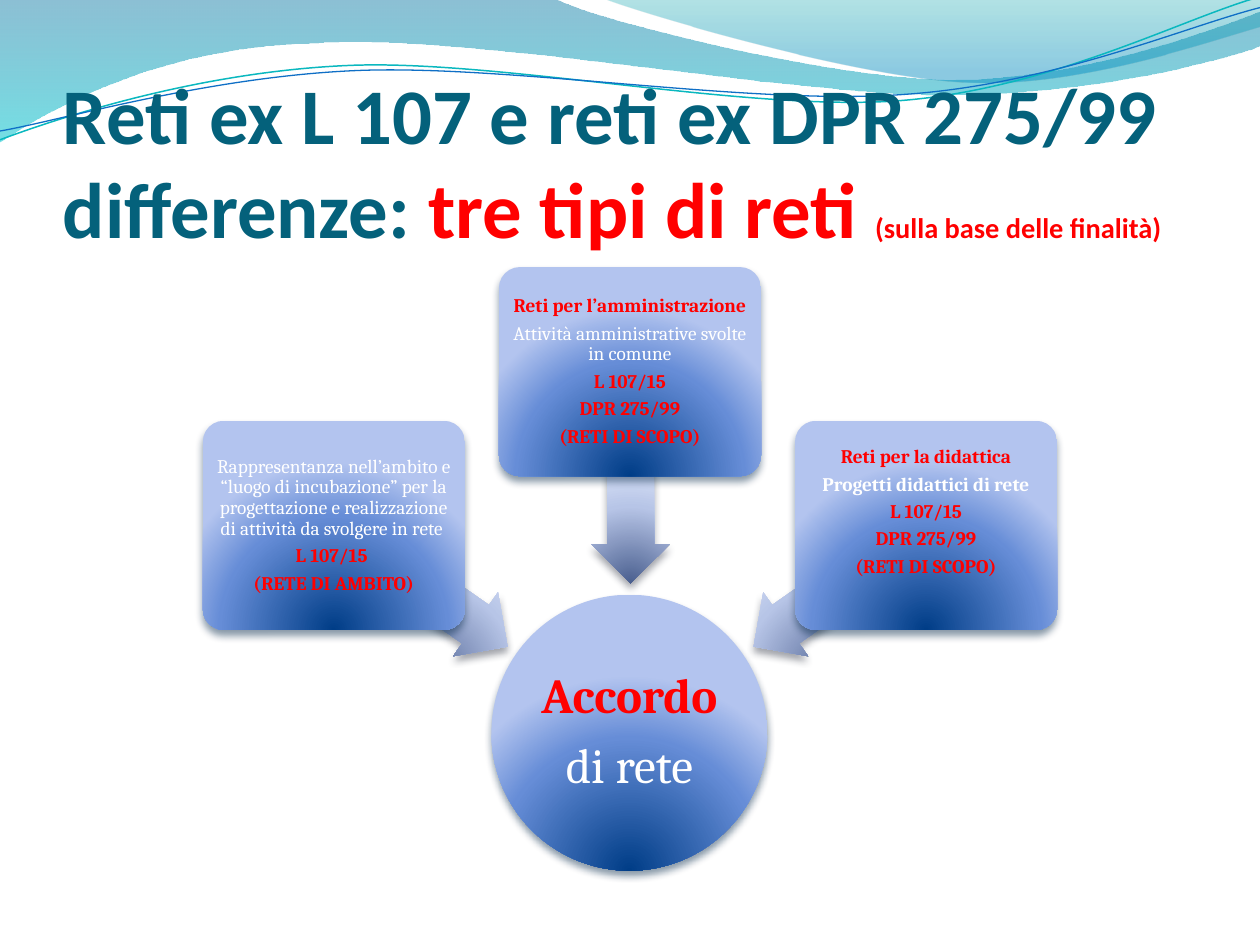
from dataclasses import dataclass
from math import cos, radians, sin

from pptx import Presentation
from pptx import util as u
from pptx.dml.color import RGBColor
from pptx.enum import shapes, text
from pptx.oxml import parse_xml
from pptx.oxml.ns import qn

NS = 'xmlns:a="http://schemas.openxmlformats.org/drawingml/2006/main"'


@dataclass(frozen=True)
class Theme:
    # Gradient stops are (position %, colour, opacity %)
    wave: tuple = ((0, "0074A1", 45), (100, "00C6CF", 55))
    crest: tuple = ((0, "00A1A9", 30), (80, "008BBF", 45))
    node: tuple = ((0, "003D87", 100), (68, "668DD7", 100), (100, "B3C4EF", 100))
    arrow: tuple = ((0, "4A5F8F", 100), (68, "B7C5E7", 100), (100, "D5DEF5", 100))
    node_shadow: str = "042747"
    arrow_shadow: str = "3C414F"
    teal_line: str = "0AB8BF"
    blue_line: str = "0F6FC6"
    title: str = "04617B"
    red: str = "FF0000"
    white: str = "FFFFFF"
    title_font: str = "Calibri"
    body_font: str = "Cambria"
    title_size: float = 45
    note_size: float = 16.2
    hub_size: float = 28
    card_size: float = 11


T = Theme()
LINEAR = '<a:lin ang="5400000" scaled="1"/>'
RADIAL = ('<a:path path="circle"><a:fillToRect l="50000" t="130000" '
          'r="50000" b="-30000"/></a:path>')


def apply(obj, **values):
    for name, value in values.items():
        setattr(obj, name, value)


def fill_gradient(sp, stops, direction):
    sp.fill.gradient()
    old = sp._element.spPr.find(qn("a:gradFill"))
    gs = "".join(
        f'<a:gs pos="{pos * 1000}"><a:srgbClr val="{color}">'
        f'<a:alpha val="{alpha * 1000}"/></a:srgbClr></a:gs>'
        for pos, color, alpha in stops)
    new = parse_xml(f'<a:gradFill {NS} rotWithShape="1"><a:gsLst>{gs}</a:gsLst>'
                    f'{direction}</a:gradFill>')
    old.getparent().replace(old, new)


def add_shadow(sp, color):
    sp.shadow.inherit = False
    sp._element.spPr.find(qn("a:effectLst")).append(parse_xml(
        f'<a:outerShdw {NS} blurRad="57150" dist="38100" dir="5400000" '
        f'algn="ctr" rotWithShape="0"><a:srgbClr val="{color}">'
        f'<a:alpha val="48000"/></a:srgbClr></a:outerShdw>'))


def add_outline(s, box, segments, close, rotation=0):
    """Freeform of straight (x, y) and cubic (x1, y1, x2, y2, x, y) segments."""
    left, top, width, height = box
    cx, cy = left + width / 2, top + height / 2
    turn = radians(-rotation)

    def local(x, y):
        dx, dy = x - cx, y - cy
        return (u.Inches(dx * cos(turn) - dy * sin(turn) + width / 2),
                u.Inches(dx * sin(turn) + dy * cos(turn) + height / 2))

    curves = [[local(*seg[i:i + 2]) for i in range(0, len(seg), 2)] for seg in segments]
    ends = [points[-1] for points in curves]
    builder = s.shapes.build_freeform(*ends[0])
    builder.add_line_segments(ends[1:], close=close)
    sp = builder.convert_to_shape()
    apply(sp, left=u.Inches(left), top=u.Inches(top), width=u.Inches(width),
          height=u.Inches(height), rotation=rotation)

    # Bend the straight steps into cubic ones, measured from the frame
    xml = ""
    for i, points in enumerate(curves):
        tag = "moveTo" if i == 0 else "cubicBezTo" if len(points) == 3 else "lnTo"
        pts = "".join(f'<a:pt x="{x}" y="{y}"/>' for x, y in points)
        xml += f"<a:{tag}>{pts}</a:{tag}>"
    old = next(sp._element.iter(qn("a:path")))
    old.getparent().replace(old, parse_xml(
        f'<a:path {NS} w="{u.Inches(width)}" h="{u.Inches(height)}">'
        f'{xml}{"<a:close/>" if close else ""}</a:path>'))
    sp.shadow.inherit = False
    return sp


def add_wave(s, box, stops, segments):
    sp = add_outline(s, box, segments, True)
    fill_gradient(sp, stops, LINEAR)
    sp.line.fill.background()


def add_curve(s, box, color, width, segments):
    sp = add_outline(s, box, segments, False, rotation=357.3)
    sp.fill.background()
    sp.line.color.rgb = RGBColor.from_string(color)
    sp.line.width = u.Pt(width)


def add_run(p, words, font, size, color, bold):
    r = p.add_run()
    r.text = words
    apply(r.font, name=font, size=u.Pt(size), bold=bold)
    r.font.color.rgb = RGBColor.from_string(color)


def add_block(s, kind, box, stops, shadow, adjustments=(), rotation=0):
    sp = s.shapes.add_shape(kind, *map(u.Inches, box))
    for i, value in enumerate(adjustments):
        sp.adjustments[i] = value
    sp.rotation = rotation
    fill_gradient(sp, stops, RADIAL)
    sp.line.fill.background()
    add_shadow(sp, shadow)
    return sp


def write_lines(sp, lines, size, bottom=0.02):
    tf = sp.text_frame
    inset = u.Inches(0.02)
    apply(tf, word_wrap=True, vertical_anchor=text.MSO_ANCHOR.MIDDLE,
          margin_left=inset, margin_right=inset, margin_top=inset,
          margin_bottom=u.Inches(bottom))
    for i, (words, color, bold) in enumerate(lines):
        p = tf.paragraphs[0] if i == 0 else tf.add_paragraph()
        apply(p, alignment=text.PP_ALIGN.CENTER, line_spacing=0.9,
              space_after=u.Pt(round(0.35 * size, 1)))
        add_run(p, words, T.body_font, size, color, bold)


def add_title(s):
    tf = s.shapes.add_textbox(*map(u.Inches, (0.5, 0.77, 9, 1.25))).text_frame
    apply(tf, word_wrap=True, vertical_anchor=text.MSO_ANCHOR.BOTTOM,
          margin_left=0, margin_right=0, margin_top=u.Inches(0.05), margin_bottom=0)
    p = tf.paragraphs[0]
    add_run(p, "Reti ex L 107 e reti ex DPR 275/99", T.title_font, T.title_size, T.title, True)
    p.add_line_break()
    add_run(p, "differenze: ", T.title_font, T.title_size, T.title, True)
    add_run(p, "tre tipi di reti ", T.title_font, T.title_size, T.red, True)
    add_run(p, "(sulla base delle finalità)", T.title_font, T.note_size, T.red, True)


def add_background(s):
    add_wave(s, (-0.01, -0.01, 10.02, 1.14), T.wave, [
        (0, 0), (4.4, -0.01), (4.76, 0.17, 6.64, 0.63, 7.58, 0.63),
        (8.53, 0.63, 9.58, 0.26, 10, 0.09), (10.01, 0.36),
        (9.83, 0.44, 8.7, 0.76, 7.46, 0.75), (6.22, 0.75, 3.82, 0.28, 2.57, 0.34),
        (1.29, 0.36, 0.46, 0.83, -0.01, 1.13), (0, 0)])
    add_wave(s, (4.79, -0.01, 5.21, 0.7), T.crest, [
        (4.79, -0.01), (5.09, 0.11, 6.82, 0.62, 7.69, 0.65),
        (8.56, 0.69, 9.61, 0.32, 10, 0.21), (10, 0), (4.79, -0.01)])
    add_curve(s, (-0.02, 0.22, 10.02, 0.71), T.teal_line, 0.85, [
        (0, 1.11), (0.48, 0.93, 1.58, 0.57, 2.77, 0.52),
        (3.95, 0.47, 5.93, 0.89, 7.13, 0.8), (8.33, 0.71, 9.38, 0.15, 9.98, -0.02)])
    add_curve(s, (-0.02, 0.3, 10.03, 0.58), T.blue_line, 0.75, [
        (0, 1.04), (0.47, 0.96, 1.64, 0.61, 2.83, 0.56),
        (4.03, 0.51, 5.97, 0.84, 7.17, 0.75), (8.36, 0.67, 9.41, 0.21, 10, 0.06)])


def add_diagram(s):
    kinds = shapes.MSO_SHAPE
    # Hub
    hub = add_block(s, kinds.OVAL, (3.9, 4.72, 2.19, 2.19), T.node, T.node_shadow)
    write_lines(hub, [("Accordo", T.red, True), ("di rete", T.white, False)], T.hub_size)

    # Cards, each with its arrow to the hub: card top, arrow top, rotation, bottom inset, lines
    scope = [(words, T.red, True) for words in ("L 107/15", "DPR 275/99", "(RETI DI SCOPO)")]
    cards = [
        (3.34, 4.34, 215, 0.02, [
            ("Rappresentanza nell’ambito e “luogo di incubazione” per la progettazione "
             "e realizzazione di attività da svolgere in rete ", T.white, False),
            ("L 107/15 ", T.red, True), ("(RETE DI AMBITO)", T.red, True)]),
        (2.12, 3.48, 270, 0.02, [
            ("Reti per l’amministrazione", T.red, True),
            ("Attività amministrative svolte in comune", T.white, False), *scope]),
        (3.34, 4.34, 325, 0.23, [
            ("Reti per la didattica", T.red, True),
            ("Progetti didattici di rete", T.white, True), *scope]),
    ]
    for i, (top, arrow_top, rotation, bottom, lines) in enumerate(cards):
        add_block(s, kinds.LEFT_ARROW, (2.5 + 1.665 * i, arrow_top, 1.68, 0.62),
                  T.arrow, T.arrow_shadow, (0.6, 0.5), rotation)
        card = add_block(s, kinds.ROUNDED_RECTANGLE, (1.61 + 2.35 * i, top, 2.08, 1.66),
                         T.node, T.node_shadow, (0.1,))
        write_lines(card, lines, T.card_size, bottom)


def main():
    prs = Presentation()
    apply(prs, slide_width=u.Inches(10), slide_height=u.Inches(7.5))
    s = prs.slides.add_slide(prs.slide_layouts[6])
    add_background(s)
    add_title(s)
    add_diagram(s)
    prs.save("out.pptx")


if __name__ == "__main__":
    main()
